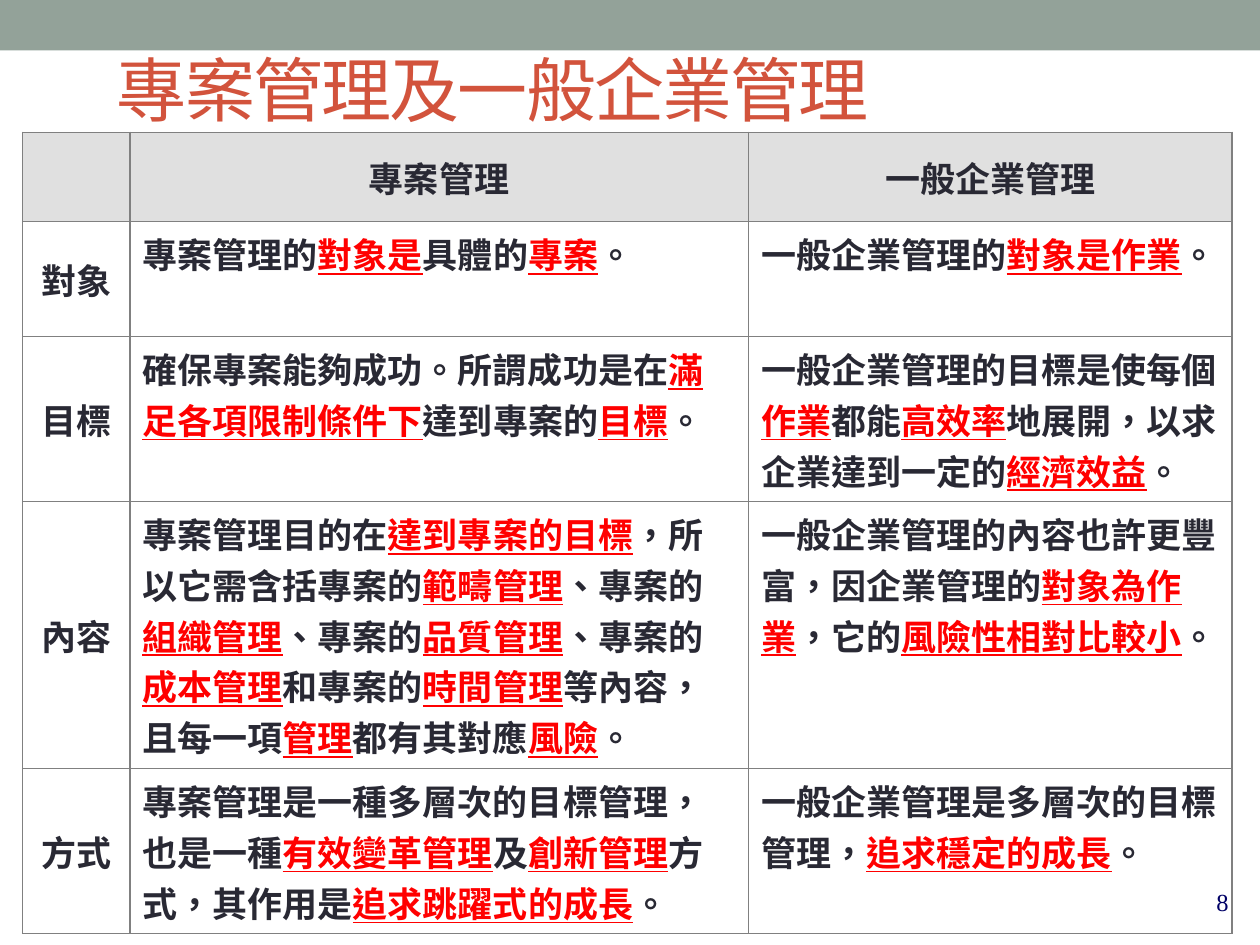
from pptx import Presentation
from pptx.dml.color import RGBColor
from pptx.enum.shapes import MSO_SHAPE
from pptx.enum.text import MSO_ANCHOR, PP_ALIGN
from pptx.oxml import parse_xml
from pptx.util import Inches, Pt

RECT = MSO_SHAPE.RECTANGLE
MIDDLE, BOTTOM, TOP = MSO_ANCHOR.MIDDLE, MSO_ANCHOR.BOTTOM, MSO_ANCHOR.TOP
LEFT, CENTER, RIGHT = PP_ALIGN.LEFT, PP_ALIGN.CENTER, PP_ALIGN.RIGHT
SAGE = RGBColor(0x93, 0xA2, 0x99)
RUST = RGBColor(0xD2, 0x53, 0x3C)
NAVY = RGBColor(0x00, 0x00, 0x66)
INK = RGBColor(0x29, 0x29, 0x34)
RED = RGBColor(0xFF, 0x00, 0x00)
PALE = RGBColor(0xE0, 0xE0, 0xE0)
GREY = RGBColor(0x80, 0x80, 0x80)
NS = "http://schemas.openxmlformats.org/drawingml/2006/main"

COLS = [0.85, 4.91, 3.84]
ROWS = [0.71, 0.91, 1.31, 2.12, 1.31]
CELLS = [
    ["", "專案管理", "一般企業管理"],
    ["對象", "專案管理的*對象是*具體的*專案*。", "一般企業管理的*對象是作業*。"],
    ["目標",
     "確保專案能夠成功。所謂成功是在*滿足各項限制條件下*達到專案的*目標*。",
     "一般企業管理的目標是使每個*作業*都能*高效率*地展開，以求企業達到一定的*經濟效益*。"],
    ["內容",
     "專案管理目的在*達到專案的目標*，所以它需含括專案的*範疇管理*、專案的*組織管理*、專案的"
     "*品質管理*、專案的*成本管理*和專案的*時間管理*等內容，且每一項*管理*都有其對應*風險*。",
     "一般企業管理的內容也許更豐富，因企業管理的*對象為作業*，它的*風險性相對比較小*。"],
    ["方式",
     "專案管理是一種多層次的目標管理，也是一種*有效變革管理*及*創新管理*方式，其作用是*追求跳躍式的成長*。",
     "一般企業管理是多層次的目標管理，*追求穩定的成長*。"],
]


def style(run, face, size, color):
    run.font.name = face
    run.font.size = Pt(size)
    run.font.color.rgb = color
    run.font._element.set("lang", "zh-TW")


def label(box, text, face, size, color, anchor, align):
    shape = slide.shapes.add_textbox(*map(Inches, box))
    frame = shape.text_frame
    frame.word_wrap = True
    frame.vertical_anchor = anchor
    frame.text = text
    para = frame.paragraphs[0]
    para.alignment = align
    style(para.runs[0], face, size, color)
    return para.runs[0]


prs = Presentation()
prs.slide_width, prs.slide_height = Inches(10), Inches(7.5)
slide = prs.slides.add_slide(prs.slide_layouts[6])

band = slide.shapes.add_shape(RECT, 0, 0, Inches(10), Inches(0.4))
band.shadow.inherit = False
band.fill.solid()
band.fill.fore_color.rgb = SAGE
band.line.fill.background()

label((7.45, 6.82, 2.4, 0.5), "8", "Times New Roman", 14, NAVY, BOTTOM, RIGHT)
title = label((0.83, 0.21, 8.39, 0.98), "專案管理及一般企業管理", "Arial", 40, RUST, MIDDLE, LEFT)
title.font._element.set("spc", "-100")

table = slide.shapes.add_table(
    len(ROWS), len(COLS), Inches(0.18), Inches(1.05),
    Inches(sum(COLS)), Inches(sum(ROWS))).table
table.first_row = table.horz_banding = False
for col, width in zip(table.columns, COLS):
    col.width = Inches(width)
for row, height in zip(table.rows, ROWS):
    row.height = Inches(height)

for r, line in enumerate(CELLS):
    for c, text in enumerate(line):
        cell = table.cell(r, c)
        head = r == 0 or c == 0
        cell.vertical_anchor = MIDDLE if head else TOP
        para = cell.text_frame.paragraphs[0]
        para.alignment = CENTER if head else LEFT
        para._p.get_or_add_pPr().set("hangingPunct", "0")
        for i, part in enumerate(text.split("*")):
            if part:
                run = para.add_run()
                run.text = part
                style(run, "Arial", 20, RED if i % 2 else INK)
                run.font.bold = True
                run.font.underline = i % 2 == 1
        props = cell._tc.get_or_add_tcPr()
        for side in ("lnL", "lnR", "lnT", "lnB"):
            props.append(parse_xml(
                f'<a:{side} xmlns:a="{NS}" w="12700"><a:solidFill>'
                f'<a:srgbClr val="{GREY}"/></a:solidFill></a:{side}>'))
        if r == 0:
            cell.fill.solid()
            cell.fill.fore_color.rgb = PALE
        else:
            cell.fill.background()

prs.save("out.pptx")
